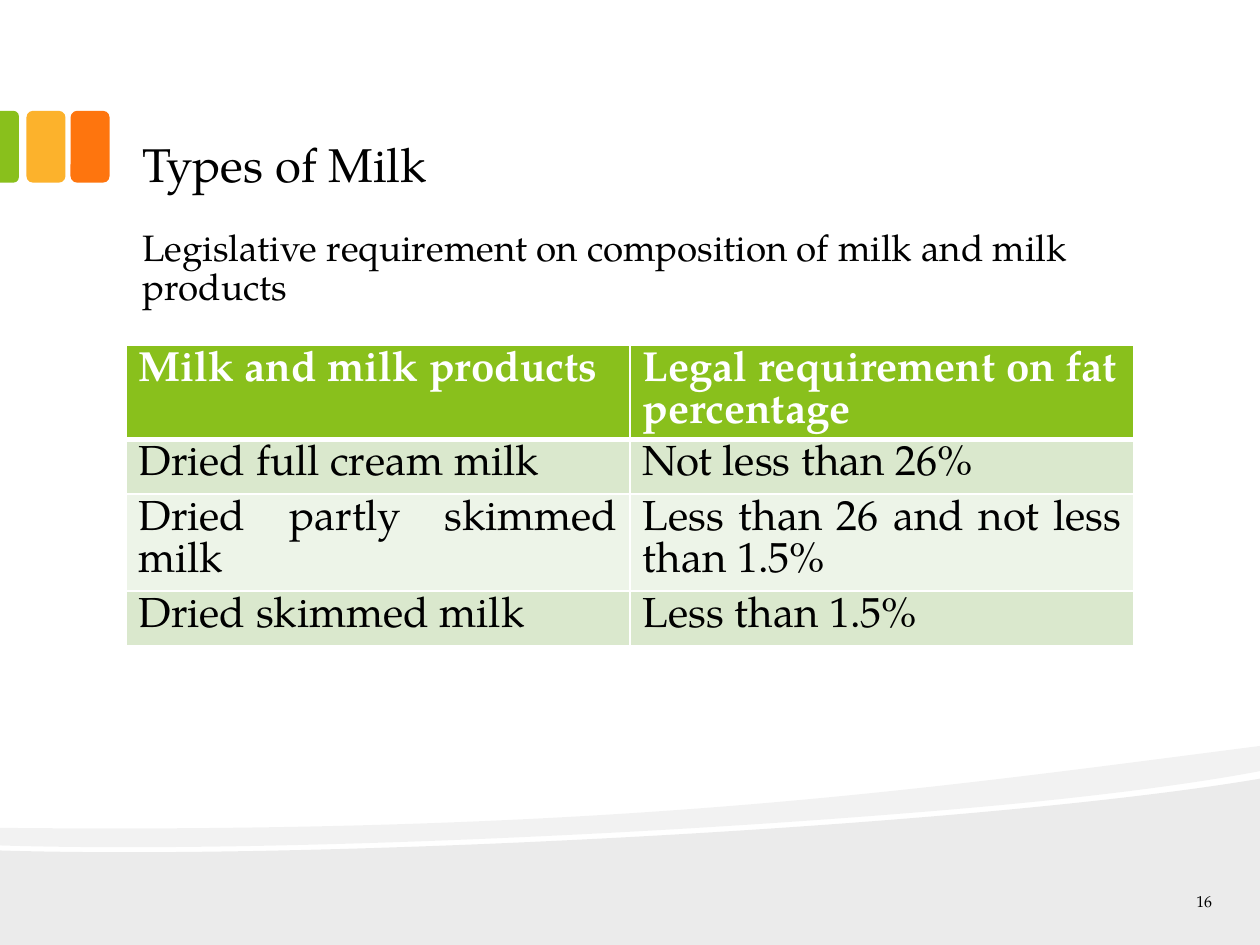
from itertools import chain

from lxml import etree
from pptx import Presentation
from pptx.dml.color import RGBColor
from pptx.enum.shapes import MSO_SHAPE
from pptx.enum.text import MSO_ANCHOR, PP_ALIGN
from pptx.oxml.ns import qn
from pptx.util import Inches, Pt

TOP, MIDDLE, BOTTOM = MSO_ANCHOR.TOP, MSO_ANCHOR.MIDDLE, MSO_ANCHOR.BOTTOM
LEFT, RIGHT, JUSTIFY = PP_ALIGN.LEFT, PP_ALIGN.RIGHT, PP_ALIGN.JUSTIFY
ROUNDED, ROUNDED_TOP = MSO_SHAPE.ROUNDED_RECTANGLE, MSO_SHAPE.ROUND_2_SAME_RECTANGLE

FONT = "TeX Gyre Pagella"
BLACK, WHITE = "000000", "FFFFFF"
GREEN, AMBER, ORANGE = "89C01C", "FCB22C", "FE750E"
BANDS = ["DAE8CD", "EDF4E8"]

COMPOSITION = [
    ("Milk and milk products", "Legal requirement on fat percentage"),
    ("Dried full cream milk", "Not less than 26%"),
    ("Dried partly skimmed milk", "Less than 26 and not less than 1.5%"),
    ("Dried skimmed milk", "Less than 1.5%"),
]
ROW_HEIGHTS = [0.74, 0.43, 0.77, 0.43]

FRAME = {
    "word_wrap": True,
    "margin_left": Inches(0.13),
    "margin_right": Inches(0.13),
    "margin_top": Inches(0.07),
    "margin_bottom": Inches(0.07),
}
HEADER_MARGINS = {"margin_top": Inches(0.04), "margin_bottom": Inches(0.04)}


def rgb(hex_colour):
    return RGBColor.from_string(hex_colour)


def apply(target, values):
    for name, value in values.items():
        setattr(target, name, value)


def place(shape, box):
    apply(shape, dict(zip(("left", "top", "width", "height"), map(Inches, box))))


def write(frame, text, size, colour=BLACK, bold=False, **paragraph_format):
    frame.text = text
    paragraph = frame.paragraphs[0]
    apply(paragraph, paragraph_format)
    font = paragraph.runs[0].font
    apply(font, {"name": FONT, "size": Pt(size), "bold": bold})
    font.color.rgb = rgb(colour)


def paint(shape, colour, opacity=100):
    shape.shadow.inherit = False
    shape.fill.solid()
    shape.fill.fore_color.rgb = rgb(colour)
    shape.line.fill.background()
    if opacity < 100:
        tint = shape.fill._xPr.find(qn("a:solidFill"))[0]
        etree.SubElement(tint, qn("a:alpha"), val=str(opacity * 1000))


def move_to_layout(slide, shape, depth):
    slide.slide_layout.shapes._spTree.insert(2 + depth, shape._element)


def bend(wave, segments):
    lines = iter(list(wave._element.iter(qn("a:lnTo"))))
    for segment in segments:
        first = next(lines)
        if len(segment) == 3:
            first.tag = qn("a:cubicBezTo")
            for _ in range(2):
                line = next(lines)
                first.append(line[0])
                line.getparent().remove(line)


def add_wave(slide, start, segments, opacity, depth):
    builder = slide.shapes.build_freeform(*map(Inches, start), scale=1.0)
    points = [(Inches(x), Inches(y)) for x, y in chain(*segments)]
    builder.add_line_segments(points, close=True)
    wave = builder.convert_to_shape()
    bend(wave, segments)
    paint(wave, BLACK, opacity)
    move_to_layout(slide, wave, depth)


def add_footer_waves(slide):
    ground = [
        [(10, 7.5)],
        [(0, 7.5)],
        [(0, 6.75)],
        [(2.64, 6.83), (7.82, 6.55), (10, 6.18)],
    ]
    ribbon = [
        [(10, 6.12)],
        [(9.42, 6.23), (8.62, 6.33), (7.72, 6.41)],
        [(5.23, 6.63), (1.93, 6.77), (0, 6.71)],
        [(0, 6.57)],
        [(4.89, 6.62), (7.28, 6.27), (10, 5.92)],
    ]
    add_wave(slide, (10, 6.18), ground, 8, 0)
    add_wave(slide, (10, 5.92), ribbon, 5, 1)


def add_tabs(slide, top):
    tabs = [
        (ROUNDED, (0.56, top, 0.31, 0.57), 0, ORANGE),
        (ROUNDED, (0.21, top, 0.31, 0.57), 0, AMBER),
        (ROUNDED_TOP, (-0.21, top + 0.21, 0.57, 0.15), 90, GREEN),
    ]
    for depth, (kind, box, rotation, colour) in enumerate(tabs, 2):
        tab = slide.shapes.add_shape(kind, *map(Inches, box))
        tab.rotation = rotation
        tab.adjustments[0] = 0.29 if rotation else 0.17
        paint(tab, colour)
        move_to_layout(slide, tab, depth)


def add_title(slide, box, text):
    title = slide.shapes.title
    place(title, box)
    apply(title.text_frame, FRAME | {"vertical_anchor": BOTTOM})
    write(title.text_frame, text, 27, alignment=LEFT)


def add_text(slide, box, text, size, anchor=TOP, **paragraph_format):
    frame = slide.shapes.add_textbox(*map(Inches, box)).text_frame
    apply(frame, FRAME | {"vertical_anchor": anchor})
    write(frame, text, size, **paragraph_format)


def add_borders(cell, widths):
    properties = cell._tc.get_or_add_tcPr()
    for index, (side, width) in enumerate(widths.items()):
        border = etree.Element(qn(f"a:ln{side}"), w=str(Pt(width)))
        fill = etree.SubElement(border, qn("a:solidFill"))
        etree.SubElement(fill, qn("a:srgbClr"), val=WHITE)
        properties.insert(index, border)


def add_composition_table(slide, box):
    rows, columns = len(COMPOSITION), len(COMPOSITION[0])
    table = slide.shapes.add_table(rows, columns, *map(Inches, box)).table
    for r, texts in enumerate(COMPOSITION):
        header = r == 0
        table.rows[r].height = Inches(ROW_HEIGHTS[r])
        for c, text in enumerate(texts):
            cell = table.cell(r, c)
            apply(cell, HEADER_MARGINS if header else {})
            cell.fill.solid()
            cell.fill.fore_color.rgb = rgb(GREEN if header else BANDS[(r - 1) % 2])
            add_borders(cell, {"L": 1, "R": 1, "T": 3 if r == 1 else 1, "B": 3 if header else 1})
            write(cell.text_frame, text, 24, WHITE if header else BLACK, header,
                  alignment=LEFT if header else JUSTIFY, line_spacing=Pt(24))


def main():
    deck = Presentation()
    apply(deck, {"slide_width": Inches(10), "slide_height": Inches(7.5)})
    slide = deck.slides.add_slide(deck.slide_layouts[5])
    add_footer_waves(slide)
    add_tabs(slide, 0.88)
    add_title(slide, (1, 0.17, 8, 1.42), "Types of Milk")
    add_text(slide, (1, 1.75, 8, 5),
             "Legislative requirement on composition of milk and milk products",
             21, line_spacing=0.9, space_before=Pt(13.5))
    add_composition_table(slide, (1, 2.74, 8, sum(ROW_HEIGHTS)))
    add_text(slide, (9.08, 7.05, 0.67, 0.2), "16", 9, MIDDLE, alignment=RIGHT)
    deck.save("out.pptx")


if __name__ == "__main__":
    main()
